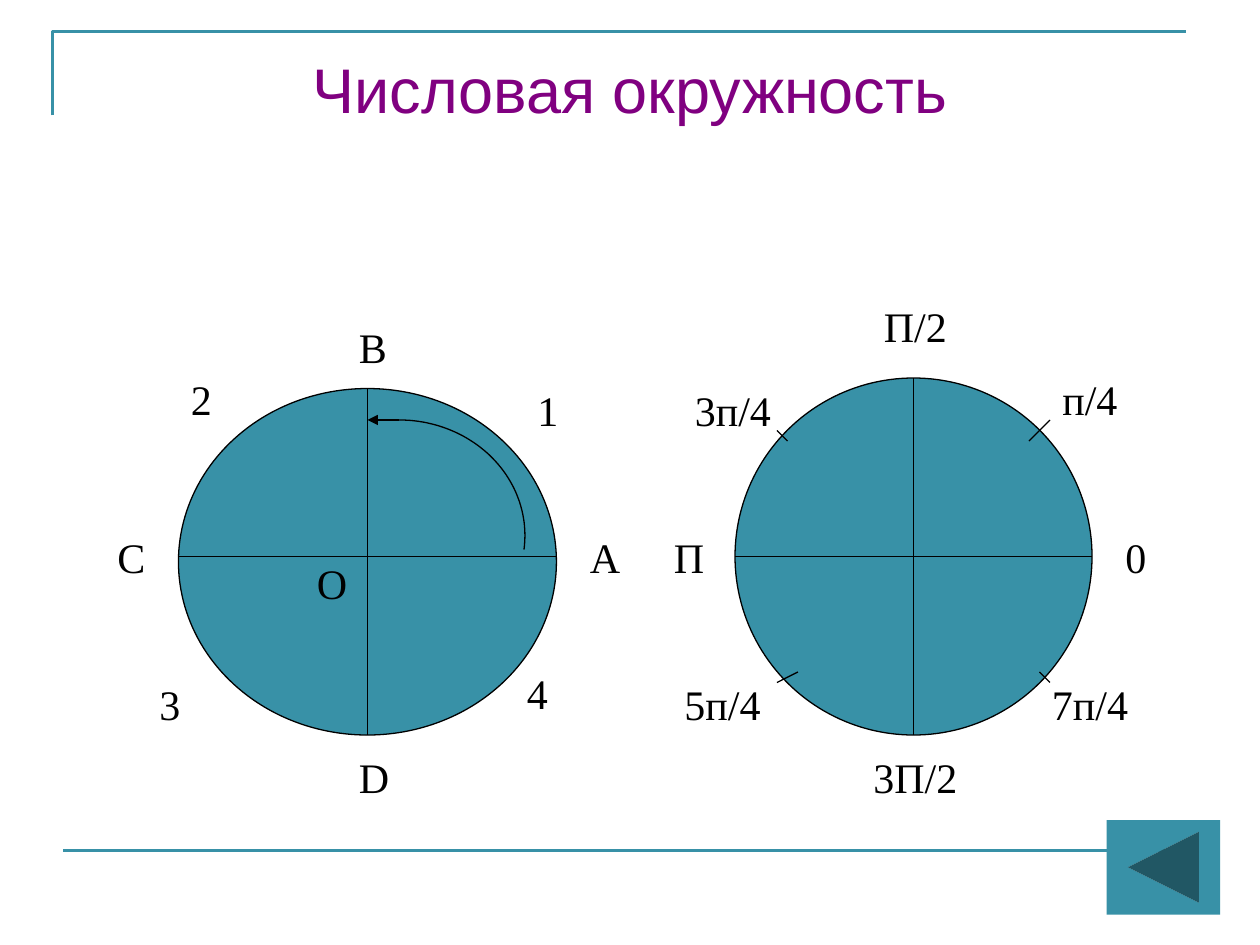
from dataclasses import dataclass
from math import cos, radians, sin
from typing import NamedTuple

from lxml.etree import SubElement
from pptx import Presentation
from pptx.dml.color import RGBColor
from pptx.enum.shapes import MSO_CONNECTOR, MSO_SHAPE
from pptx.enum.text import MSO_ANCHOR, PP_ALIGN
from pptx.oxml.ns import qn
from pptx.util import Inches, Pt


@dataclass(frozen=True)
class Theme:
    teal: RGBColor = RGBColor(0x38, 0x91, 0xA7)
    purple: RGBColor = RGBColor(0x80, 0x00, 0x80)
    black: RGBColor = RGBColor(0, 0, 0)
    title_font: str = "Arial"
    label_font: str = "Times New Roman"
    title_size: Pt = Pt(36)
    label_size: Pt = Pt(24)
    thin: Pt = Pt(0.75)
    thick: Pt = Pt(1.5)


class Box(NamedTuple):
    col: float
    row: float
    cols: float
    rows: float


class Segment(NamedTuple):
    col1: float
    row1: float
    col2: float
    row2: float


class Label(NamedTuple):
    text: str
    col: float
    row: float
    cols: float


class Circle(NamedTuple):
    box: Box
    axis_row: float
    labels: tuple[Label, ...]


THEME = Theme()
COLS, ROWS = 120, 90
LABEL_ROWS = 6

QUARTERS = Circle(Box(17, 37, 36, 33), 53, (
    Label("B", 33, 30, 6), Label("D", 33, 71, 8),
    Label("A", 55, 50, 6), Label("C", 10, 50, 6),
    Label("O", 29, 52.5, 6), Label("3", 14, 64, 8),
    Label("2", 17, 35, 10), Label("1", 50, 36, 13),
    Label("4", 49, 63, 12),
))
RADIANS = Circle(Box(70, 36, 34, 34), 53, (
    Label("П/2", 83, 28, 12), Label("0", 106, 50, 9),
    Label("П", 63, 50, 6), Label("3П/2", 82, 71, 12),
    Label("3п/4", 65, 36, 12), Label("п/4", 100, 35, 13),
    Label("5п/4", 64, 64, 14), Label("7п/4", 99, 64, 14),
))
TICKS = (
    Segment(74, 41, 75, 42), Segment(74, 65, 76, 64),
    Segment(100, 65, 99, 64), Segment(98, 42, 100, 40),
)


def grid(n: float) -> int:
    return Inches(n * 10 / COLS)


def place(box: Box) -> list[int]:
    return [grid(n) for n in box]


def draw_line(s, seg: Segment, color=THEME.black, width=THEME.thin, arrow: bool = False) -> None:
    line = s.shapes.add_connector(MSO_CONNECTOR.STRAIGHT, *[grid(n) for n in seg])
    line.line.color.rgb = color
    line.line.width = width
    if arrow:
        SubElement(line.line._get_or_add_ln(), qn("a:tailEnd"), type="triangle")
    SubElement(line._element.spPr, qn("a:effectLst"))


def draw_path(s, points: list[tuple[float, float]], color, width) -> None:
    start, *rest = [(grid(x), grid(y)) for x, y in points]
    builder = s.shapes.build_freeform(*start)
    builder.add_line_segments(rest, close=False)
    sp = builder.convert_to_shape()
    sp.shadow.inherit = False
    sp.fill.background()
    sp.line.color.rgb = color
    sp.line.width = width


def draw_shape(s, kind: MSO_SHAPE, box: Box, outlined: bool) -> None:
    sp = s.shapes.add_shape(kind, *place(box))
    sp.shadow.inherit = False
    sp.fill.solid()
    sp.fill.fore_color.rgb = THEME.teal
    if outlined:
        sp.line.color.rgb = THEME.black
        sp.line.width = THEME.thin
    else:
        sp.line.fill.background()


def draw_text(s, text: str, box: Box, font: str, size, color, title: bool = False) -> None:
    tf = s.shapes.add_textbox(*place(box)).text_frame
    tf.word_wrap = not title
    tf.vertical_anchor = MSO_ANCHOR.MIDDLE if title else MSO_ANCHOR.TOP
    p = tf.paragraphs[0]
    p.alignment = PP_ALIGN.CENTER if title else PP_ALIGN.LEFT
    r = p.add_run()
    r.text = text
    r.font.name = font
    r.font.size = size
    r.font.color.rgb = color


def draw_circle(s, circle: Circle) -> None:
    left, top, cols, rows = circle.box
    middle = left + cols / 2
    draw_shape(s, MSO_SHAPE.OVAL, circle.box, True)
    draw_line(s, Segment(left, circle.axis_row, left + cols, circle.axis_row))
    draw_line(s, Segment(middle, top, middle, top + rows))
    for label in circle.labels:
        box = Box(label.col, label.row, label.cols, LABEL_ROWS)
        draw_text(s, label.text, box, THEME.label_font, THEME.label_size, THEME.black)


def draw_direction(s) -> None:
    angles = [radians(a) for a in range(-90, 8)]
    arc = [(38 + 12 * cos(a), 51 + 11 * sin(a)) for a in angles]
    draw_path(s, arc, THEME.black, THEME.thin)
    draw_line(s, Segment(38, 40, 35, 40), arrow=True)


def main() -> None:
    prs = Presentation()
    prs.slide_width, prs.slide_height = grid(COLS), grid(ROWS)
    s = prs.slides.add_slide(prs.slide_layouts[6])
    draw_path(s, [(5, 11), (5, 3), (113, 3)], THEME.teal, THEME.thick)
    draw_line(s, Segment(6, 81, 114, 81), THEME.teal, THEME.thick)
    draw_circle(s, QUARTERS)
    draw_direction(s)
    draw_circle(s, RADIANS)
    for tick in TICKS:
        draw_line(s, tick)
    draw_text(s, "Числовая окружность", Box(11.8, 3.7, 96.4, 9.4),
              THEME.title_font, THEME.title_size, THEME.purple, title=True)
    draw_shape(s, MSO_SHAPE.ACTION_BUTTON_BACK_OR_PREVIOUS, Box(105.4, 78.1, 10.8, 9), False)
    prs.save("out.pptx")


if __name__ == "__main__":
    main()
